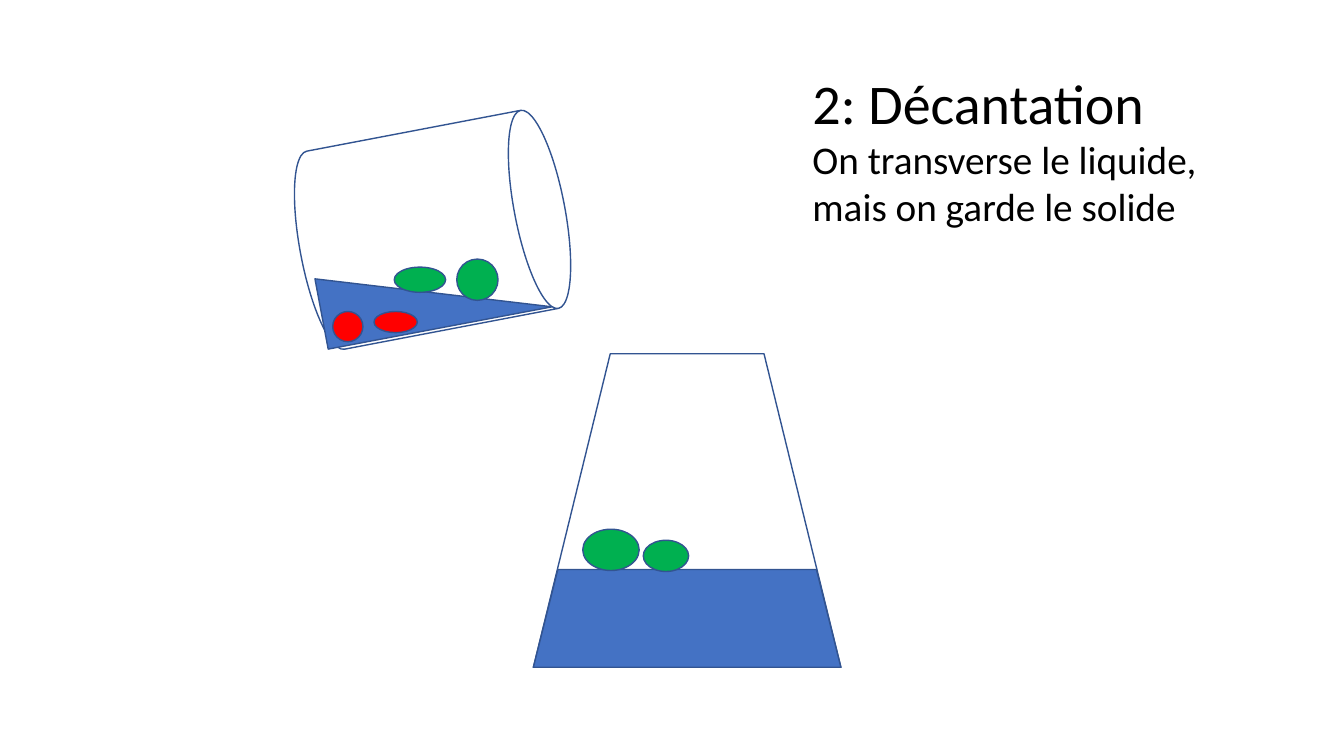
from pptx import Presentation
from pptx.dml.color import RGBColor
from pptx.enum import shapes, text
from pptx.util import Inches, Pt

KIND = shapes.MSO_SHAPE
GLASS, LIQUID, OUTLINE, INK = "FFFFFF", "4472C4", "325491", "000000"
SINKING, FLOATING = "FF0000", "00B050"
FONT = "Calibri"

# kind, (left, top, width, height), rotation, fill
VESSELS = [
    (KIND.TRAPEZOID, (5.29, 3.51, 3.05, 3.11), 0, GLASS),
    (KIND.CAN, (3.29, 0.95, 2, 2.66), 79.2, GLASS),
    (KIND.TRAPEZOID, (5.29, 5.65, 3.05, 0.97), 0, LIQUID),
    (KIND.RIGHT_TRIANGLE, (3.17, 2.55, 2.26, 0.71), 349.3, LIQUID),
]
# (left, top, width, height), fill
GRAINS = [
    ((3.3, 3.09, 0.3, 0.3), SINKING),
    ((6.38, 5.36, 0.45, 0.31), FLOATING),
    ((5.78, 5.25, 0.56, 0.41), FLOATING),
    ((4.53, 2.57, 0.41, 0.41), FLOATING),
    ((3.91, 2.65, 0.51, 0.25), FLOATING),
    ((3.71, 3.09, 0.43, 0.21), SINKING),
]
CAPTION_BOX = (7.96, 0.63, 4.71, 1.72)
CAPTION = [
    ("2: Décantation", 40),
    ("On transverse le liquide, mais on garde le solide", 28),
]


def color(hex_code):
    return RGBColor.from_string(hex_code)


def add_part(slide, kind, box, rotation, fill):
    part = slide.shapes.add_shape(kind, *map(Inches, box))
    part.rotation = rotation
    part.shadow.inherit = False
    part.fill.solid()
    part.fill.fore_color.rgb = color(fill)
    part.line.color.rgb = color(OUTLINE)
    part.line.width = Pt(1)


def add_caption(slide):
    frame = slide.shapes.add_textbox(*map(Inches, CAPTION_BOX)).text_frame
    frame.word_wrap = True
    frame.auto_size = text.MSO_AUTO_SIZE.SHAPE_TO_FIT_TEXT
    frame.text = "\n".join(line for line, _ in CAPTION)
    for paragraph, (_, size) in zip(frame.paragraphs, CAPTION):
        font = paragraph.runs[0].font
        font.name = FONT
        font.size = Pt(size)
        font.color.rgb = color(INK)


def main():
    deck = Presentation()
    deck.slide_width, deck.slide_height = Inches(13.33), Inches(7.5)
    slide = deck.slides.add_slide(deck.slide_layouts[6])
    for vessel in VESSELS:
        add_part(slide, *vessel)
    for box, fill in GRAINS:
        add_part(slide, KIND.OVAL, box, 0, fill)
    add_caption(slide)
    deck.save("out.pptx")


if __name__ == "__main__":
    main()
